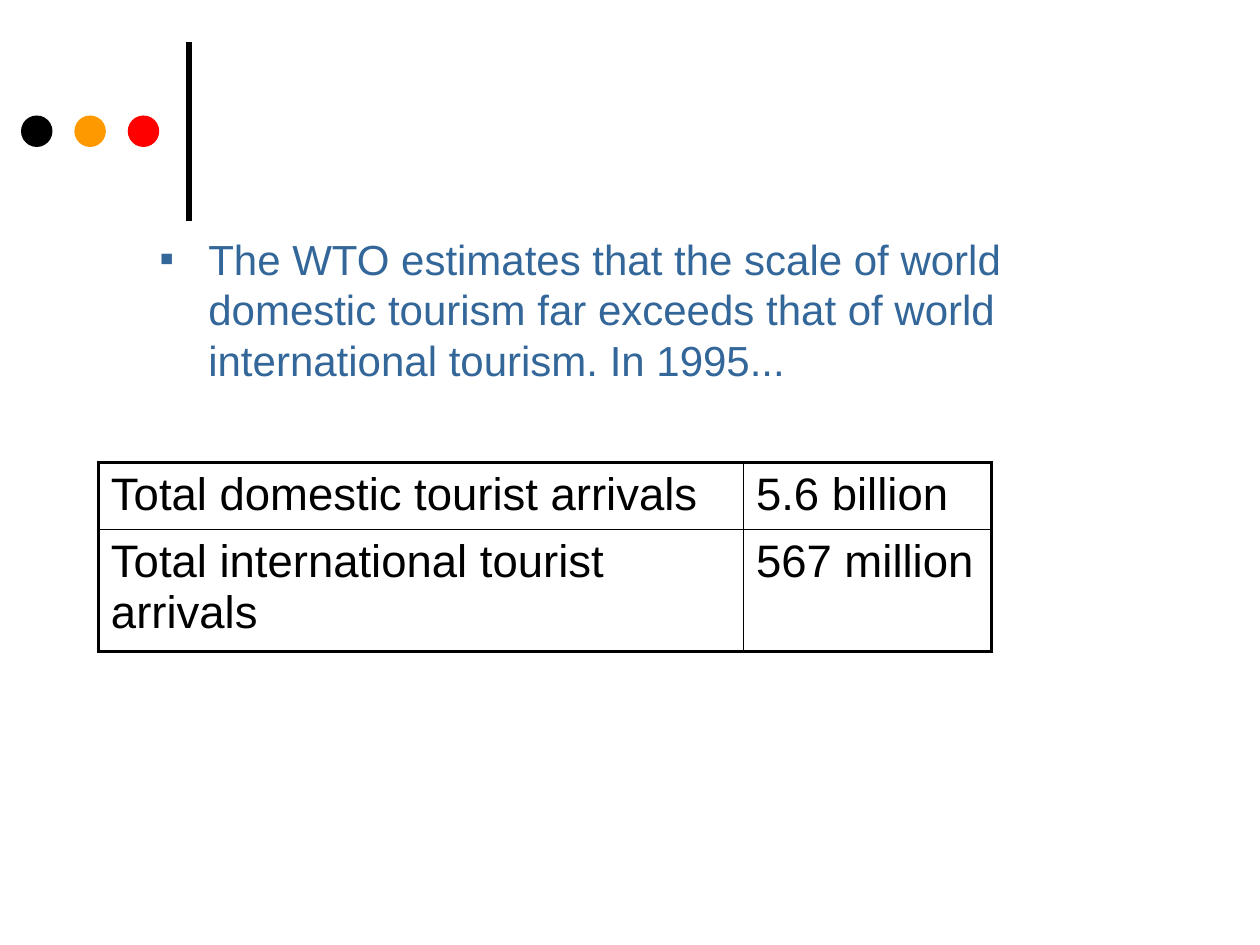
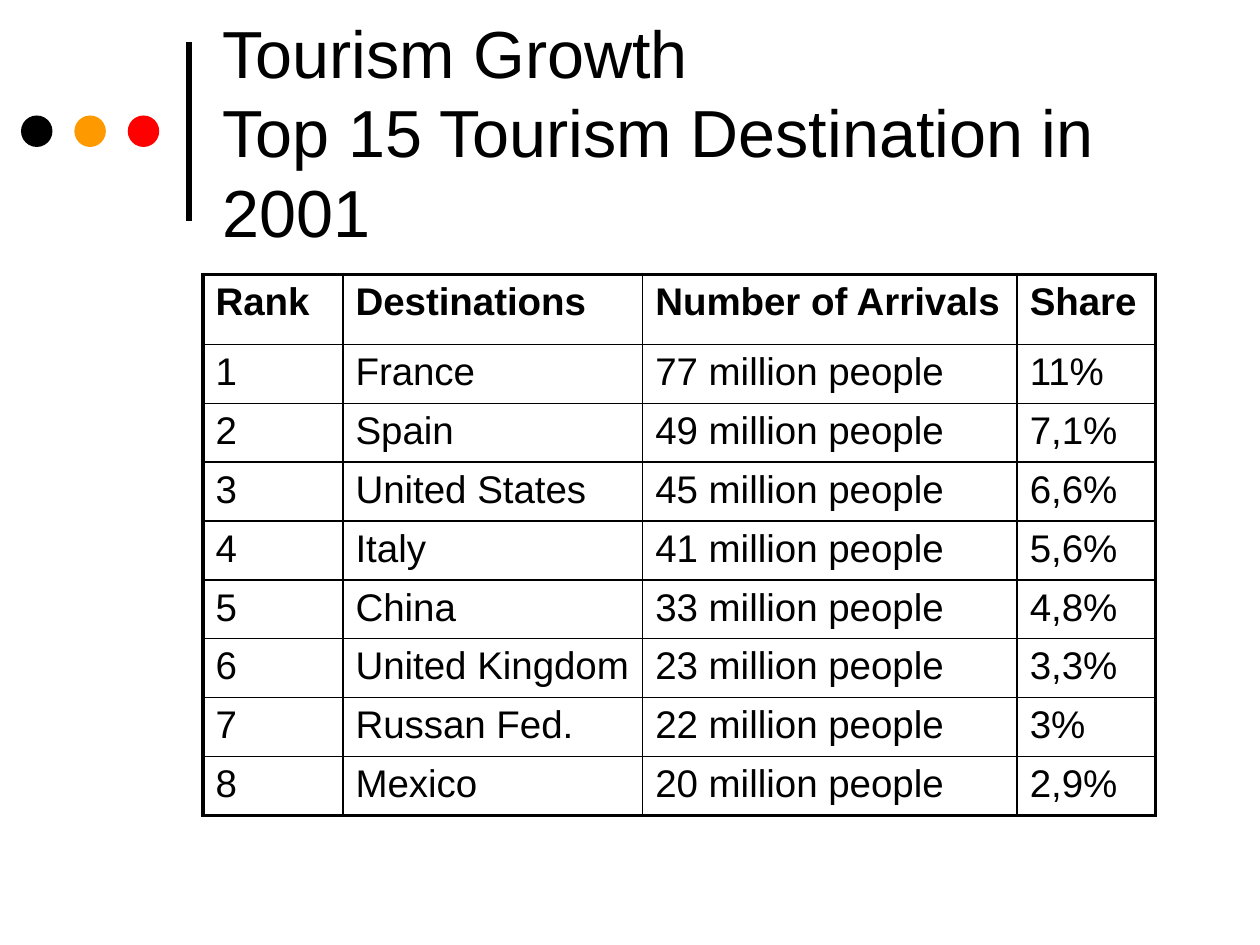
from dataclasses import dataclass

from lxml.etree import SubElement
from pptx import Presentation
from pptx.dml.color import RGBColor
from pptx.enum.shapes import MSO_CONNECTOR, MSO_SHAPE
from pptx.enum.text import MSO_ANCHOR
from pptx.oxml.ns import qn
from pptx.util import Pt


@dataclass(frozen=True)
class Theme:
    font: str = "Arial"
    ink: str = "000000"
    body: str = "336699"
    dots: tuple = ("000000", "FF9900", "FF0000")
    title_size: int = 38
    body_size: int = 24
    figures_size: int = 26
    ranking_size: int = 22
    title_leading: float = 45.5
    body_leading: float = 28.9
    outer_border: float = 2.25
    inner_border: float = 1


theme = Theme()


def add_text(slide, text, left, top, width, height, size, color, leading):
    """Add a wrapping text box with one paragraph; return its frame."""
    frame = slide.shapes.add_textbox(Pt(left), Pt(top), Pt(width), Pt(height)).text_frame
    frame.word_wrap = True
    paragraph = frame.paragraphs[0]
    paragraph.text = text
    paragraph.line_spacing = Pt(leading)
    paragraph.font.name = theme.font
    paragraph.font.size = Pt(size)
    paragraph.font.color.rgb = RGBColor.from_string(color)
    return frame


def add_ruled_table(slide, rows, left, top, widths, heights, size, header=False):
    """Add an unfilled table with a heavy frame and thin inner rules."""
    table = slide.shapes.add_table(len(rows), len(widths), Pt(left), Pt(top),
                                   Pt(sum(widths)), Pt(sum(heights))).table
    table.first_row = table.horz_banding = False
    for column, width in zip(table.columns, widths):
        column.width = Pt(width)
    for row, height in zip(table.rows, heights):
        row.height = Pt(height)
    for row_index, values in enumerate(rows):
        for column_index, value in enumerate(values):
            cell = table.cell(row_index, column_index)
            cell.text = value
            font = cell.text_frame.paragraphs[0].font
            font.name = theme.font
            font.size = Pt(size)
            font.bold = header and row_index == 0
            font.color.rgb = RGBColor.from_string(theme.ink)
            on_frame = {
                "a:lnL": column_index == 0,
                "a:lnR": column_index == len(widths) - 1,
                "a:lnT": row_index == 0,
                "a:lnB": row_index == len(rows) - 1,
            }
            properties = cell._tc.get_or_add_tcPr()
            for side, outer in on_frame.items():
                weight = theme.outer_border if outer else theme.inner_border
                line = SubElement(properties, qn(side), w=str(int(Pt(weight))))
                SubElement(SubElement(line, qn("a:solidFill")), qn("a:srgbClr"), val=theme.ink)
            cell.fill.background()


presentation = Presentation()
presentation.slide_width, presentation.slide_height = Pt(720), Pt(540)
blank = presentation.slide_layouts[6]
domestic_slide, ranking_slide = [presentation.slides.add_slide(blank) for _ in range(2)]

# Vertical rule and three dots on every slide
for slide in presentation.slides:
    rule = slide.shapes.add_connector(MSO_CONNECTOR.STRAIGHT, Pt(108), Pt(126), Pt(108), Pt(24))
    rule.line.width = Pt(3)
    rule.line.color.rgb = RGBColor.from_string(theme.ink)
    SubElement(rule._element.spPr, qn("a:effectLst"))
    for index, color in enumerate(theme.dots):
        dot = slide.shapes.add_shape(MSO_SHAPE.OVAL, Pt(12 + 30.5 * index), Pt(66), Pt(18), Pt(18))
        dot.shadow.inherit = False
        dot.fill.solid()
        dot.fill.fore_color.rgb = RGBColor.from_string(color)
        dot.line.fill.background()

# Domestic against international tourism
estimate = add_text(
    domestic_slide,
    "The WTO estimates that the scale of world domestic tourism far exceeds "
    "that of world international tourism. In 1995...",
    84, 129.6, 567.5, 94.5, theme.body_size, theme.body, theme.body_leading)
bullet_properties = estimate.paragraphs[0]._p.get_or_add_pPr()
bullet_properties.set("marL", str(int(Pt(28))))
bullet_properties.set("indent", str(int(Pt(-28))))
bullet = SubElement(bullet_properties, qn("a:buFont"), typeface=theme.font)
bullet.addnext(bullet.makeelement(qn("a:buChar"), {"char": "▪"}))
# Default run properties must come after the bullet
bullet_properties.append(bullet_properties.find(qn("a:defRPr")))

add_ruled_table(
    domestic_slide,
    [("Total domestic tourist arrivals", "5.6 billion"),
     ("Total international tourist arrivals", "567 million")],
    56.2, 264.3, [368.6, 141.8], [38.3, 69.7], theme.figures_size)

# Top destinations
title = add_text(
    ranking_slide, "Tourism Growth\vTop 15 Tourism Destination in 2001",
    120, 15, 552, 120, theme.title_size, theme.ink, theme.title_leading)
title.vertical_anchor = MSO_ANCHOR.MIDDLE

destinations = [
    ("France", 77, "11%"),
    ("Spain", 49, "7,1%"),
    ("United States", 45, "6,6%"),
    ("Italy", 41, "5,6%"),
    ("China", 33, "4,8%"),
    ("United Kingdom", 23, "3,3%"),
    ("Russan Fed.", 22, "3%"),
    ("Mexico", 20, "2,9%"),
]
ranking = [("Rank", "Destinations", "Number of Arrivals", "Share")]
for rank, (country, millions, share) in enumerate(destinations, start=1):
    ranking.append((str(rank), country, f"{millions} million people", share))
add_ruled_table(
    ranking_slide, ranking, 116, 156.7, [80, 171.3, 214, 79],
    [40.2] + [31.8] * len(destinations), theme.ranking_size, header=True)

presentation.save("out.pptx")
